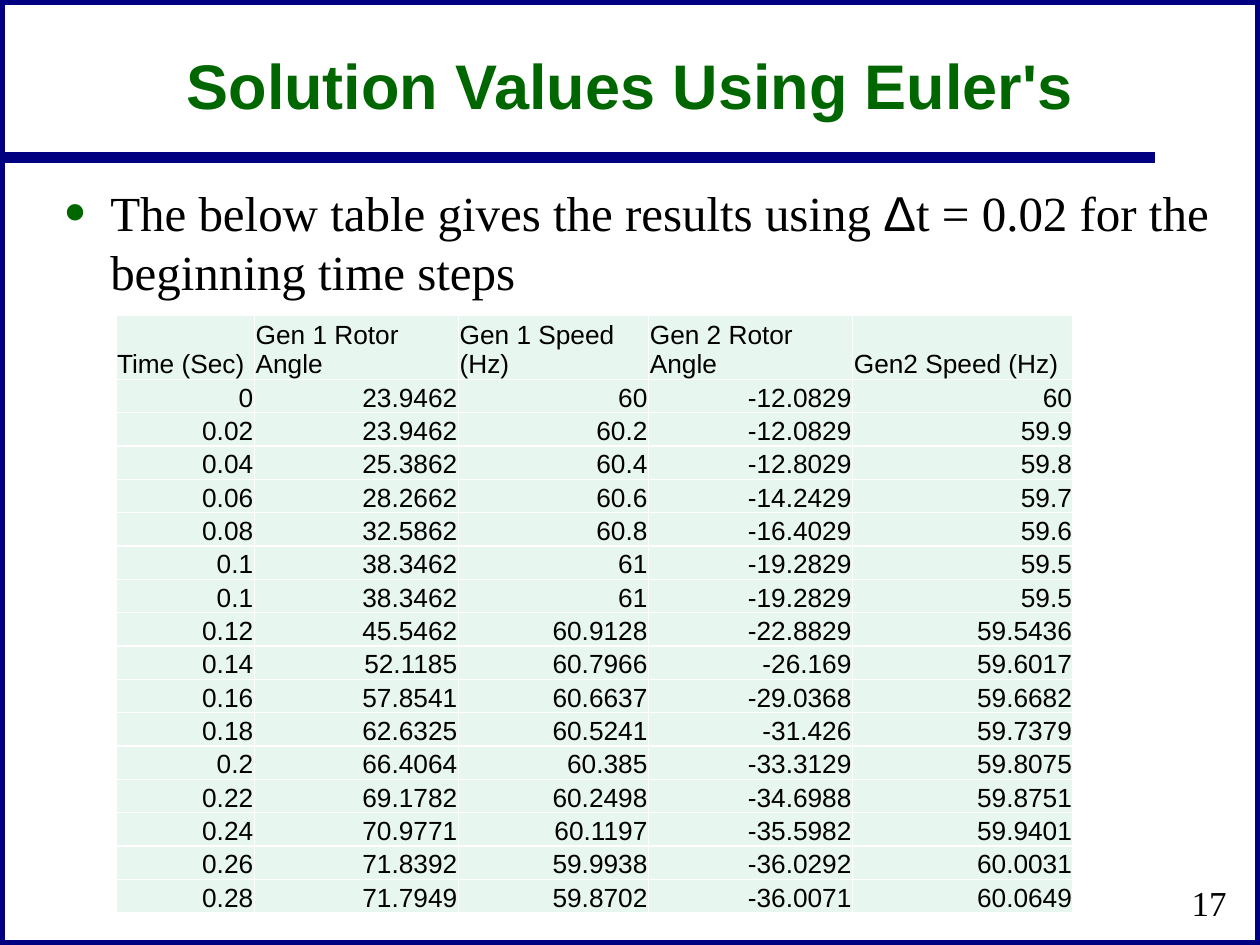
import dataclasses

import lxml.etree
import pptx
import pptx.dml.color
import pptx.enum.shapes
import pptx.enum.text
import pptx.oxml.ns
import pptx.util

Pt = pptx.util.Pt
Align = pptx.enum.text.PP_ALIGN
Anchor = pptx.enum.text.MSO_ANCHOR
qn = pptx.oxml.ns.qn


@dataclasses.dataclass(frozen=True)
class Theme:
    navy: str = "000080"
    green: str = "006600"
    black: str = "000000"
    white: str = "FFFFFF"
    mint: str = "E7F6EF"
    sans: str = "Arial"
    serif: str = "Times New Roman"
    title: float = 36
    body: float = 28
    number: float = 20
    cell: float = 15


theme = Theme()


def write(para, text, font=theme.sans, size=theme.cell, color=theme.black,
          bold=False, align=Align.LEFT):
    """Add one formatted run to a paragraph."""
    para.alignment = align
    run = para.add_run()
    run.text = text
    run.font.name = font
    run.font.size = Pt(size)
    run.font.bold = bold
    run.font.color.rgb = pptx.dml.color.RGBColor.from_string(color)


def add(parent, tag, **attrs):
    return lxml.etree.SubElement(parent, qn(tag), attrs)


deck = pptx.Presentation()
deck.slide_width, deck.slide_height = Pt(720), Pt(540)
slide = deck.slides.add_slide(deck.slide_layouts[1])
shapes = slide.shapes
title, body = slide.placeholders
navy = pptx.dml.color.RGBColor.from_string(theme.navy)

# Border and rule
border = shapes.add_shape(pptx.enum.shapes.MSO_SHAPE.RECTANGLE,
                          0, 0, Pt(720), Pt(540))
border.shadow.inherit = False
border.fill.background()
rule = shapes.add_connector(pptx.enum.shapes.MSO_CONNECTOR.STRAIGHT,
                            0, Pt(90), Pt(660), Pt(90))
add(rule.element.spPr, "a:effectLst")
for shape in (border, rule):
    shape.line.color.rgb = navy
    shape.line.width = Pt(6)

# Title and list, brought in front of the border
tree = border.element.getparent()
for holder, box, anchor in (
    (title, (54, 18, 612, 60), Anchor.MIDDLE),
    (body, (28.8, 100.8, 672.5, 79.2), Anchor.TOP),
):
    tree.append(holder.element)
    holder.left, holder.top, holder.width, holder.height = map(Pt, box)
    holder.text_frame.auto_size = pptx.enum.text.MSO_AUTO_SIZE.NONE
    holder.text_frame.vertical_anchor = anchor

write(title.text_frame.paragraphs[0], "Solution Values Using Euler's",
      size=theme.title, color=theme.green, bold=True, align=Align.CENTER)

item = body.text_frame.paragraphs[0]
props = item._p.get_or_add_pPr()
props.set("marL", str(Pt(27)))
props.set("indent", str(Pt(-27)))
add(add(props, "a:buClr"), "a:srgbClr", val=theme.green)
add(props, "a:buSzPct", val="140000")
add(props, "a:buFont", typeface=theme.serif)
add(props, "a:buChar", char="•")
item.space_before = Pt(0)
for text, font in (
    ("The below table gives the results using ", theme.serif),
    ("Δ", theme.sans),
    ("t = 0.02 for the beginning time steps", theme.serif),
):
    write(item, text, font=font, size=theme.body)

# Slide number
number = shapes.add_textbox(Pt(558), Pt(498), Pt(150), Pt(36)).text_frame
number.word_wrap = True
number.vertical_anchor = Anchor.MIDDLE
write(number.paragraphs[0], "17", font=theme.serif, size=theme.number,
      align=Align.RIGHT)

# Table of results
heads = ["Time (Sec)", "Gen 1 Rotor Angle", "Gen 1 Speed (Hz)",
         "Gen 2 Rotor Angle", "Gen2 Speed (Hz)"]
values = """
0 23.9462 60 -12.0829 60
0.02 23.9462 60.2 -12.0829 59.9
0.04 25.3862 60.4 -12.8029 59.8
0.06 28.2662 60.6 -14.2429 59.7
0.08 32.5862 60.8 -16.4029 59.6
0.1 38.3462 61 -19.2829 59.5
0.1 38.3462 61 -19.2829 59.5
0.12 45.5462 60.9128 -22.8829 59.5436
0.14 52.1185 60.7966 -26.169 59.6017
0.16 57.8541 60.6637 -29.0368 59.6682
0.18 62.6325 60.5241 -31.426 59.7379
0.2 66.4064 60.385 -33.3129 59.8075
0.22 69.1782 60.2498 -34.6988 59.8751
0.24 70.9771 60.1197 -35.5982 59.9401
0.26 71.8392 59.9938 -36.0292 60.0031
0.28 71.7949 59.8702 -36.0071 60.0649
"""
rows = [heads] + [line.split() for line in values.strip().splitlines()]
widths = [79.2, 116.6, 108.7, 116.6, 126]
high = 324 / len(rows)

table = shapes.add_table(len(rows), len(heads), Pt(66.2), Pt(180),
                         Pt(sum(widths)), Pt(324)).table
table.first_row = table.horz_banding = False
for column, width in zip(table.columns, widths):
    column.width = Pt(width)
for r, row in enumerate(rows):
    table.rows[r].height = Pt(high)
    for c, text in enumerate(row):
        cell = table.cell(r, c)
        cell.margin_left = cell.margin_right = cell.margin_top = Pt(0.72)
        cell.margin_bottom = 0
        cell.vertical_anchor = Anchor.BOTTOM
        write(cell.text_frame.paragraphs[0], text,
              align=Align.RIGHT if r else Align.LEFT)
        edges = cell._tc.get_or_add_tcPr()
        for side in ("a:lnL", "a:lnR", "a:lnT", "a:lnB"):
            edge = add(edges, side, w=str(Pt(1)))
            add(add(edge, "a:solidFill"), "a:srgbClr", val=theme.white)
        cell.fill.solid()
        cell.fill.fore_color.rgb = pptx.dml.color.RGBColor.from_string(theme.mint)

deck.save("out.pptx")
